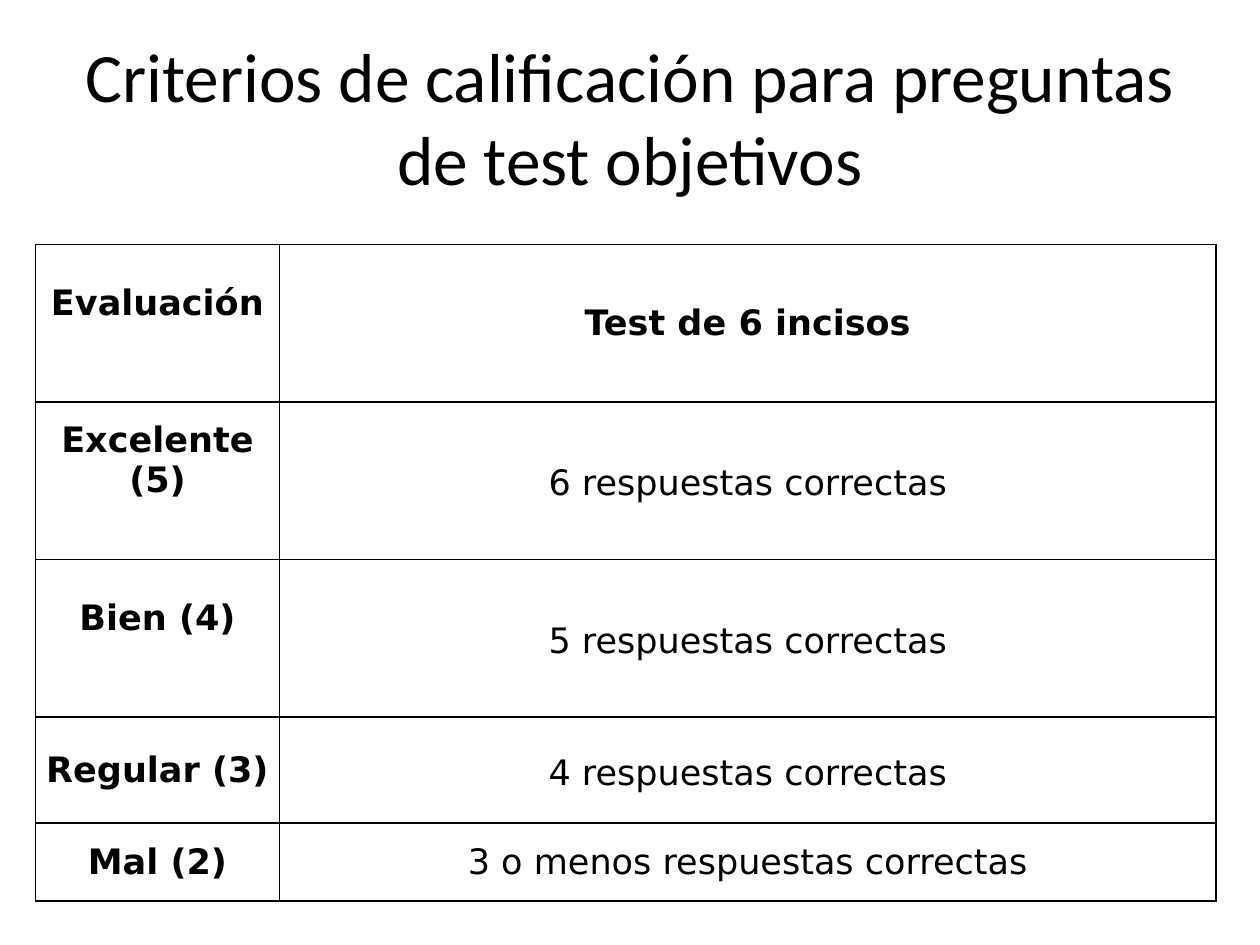
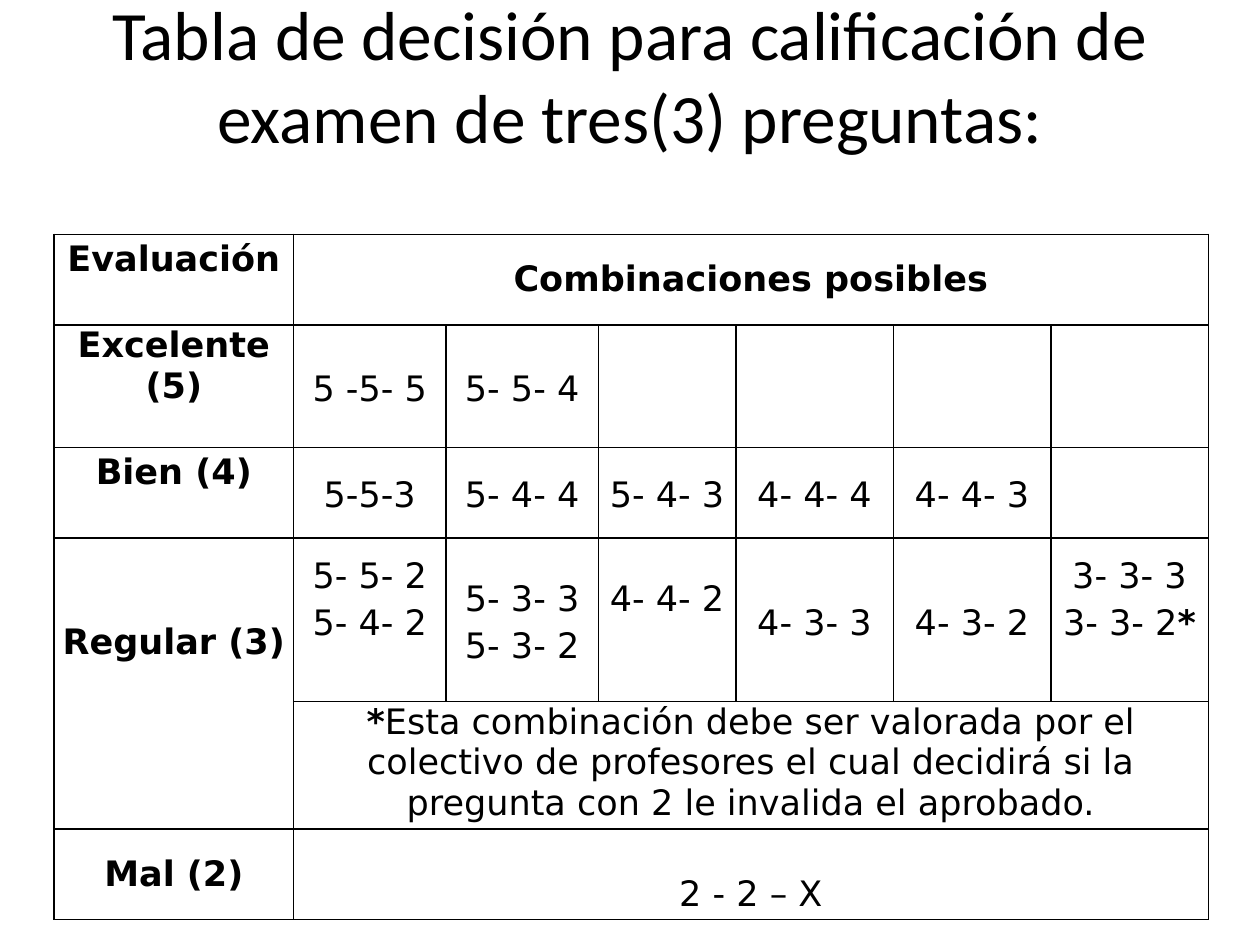
from dataclasses import dataclass
from lxml.etree import SubElement
from pptx import Presentation
from pptx.dml.color import RGBColor
from pptx.enum.text import MSO_ANCHOR, MSO_AUTO_SIZE, PP_ALIGN
from pptx.oxml.ns import qn
from pptx.util import Inches, Pt

BLACK = RGBColor(0x00, 0x00, 0x00)
TITLE_FONT, TITLE_SIZE = "Calibri", Pt(39.6)
CELL_FONT, CELL_SIZE = "DejaVu Sans", Pt(20)
TITLE_LINE, CELL_LINE = Pt(48), Pt(23.28)
LOOSE = 1.15


@dataclass
class Entry:
    text: str = ""
    bold: bool = False
    spacing: float = 1.0
    above: int = 0
    below: int = 0
    span: tuple = (1, 1)
    anchor: MSO_ANCHOR = MSO_ANCHOR.MIDDLE


def head(text, below=0, span=(1, 1)):
    return Entry(text, bold=True, below=below, span=span)


def score(text="", below=0):
    return Entry(text, spacing=LOOSE, below=below)


class Deck:
    def __init__(self):
        self.prs = Presentation()
        self.prs.slide_width, self.prs.slide_height = Inches(10), Inches(7.5)
        self.s = None

    def x(self, percent):
        return int(self.prs.slide_width * percent / 100)

    def y(self, percent):
        return int(self.prs.slide_height * percent / 100)

    def style(self, p, font, size, bold=False):
        p.alignment = PP_ALIGN.CENTER
        p.font.name, p.font.size, p.font.bold = font, size, bold
        p.font.color.rgb = BLACK

    def slide(self, title, lines_below=0):
        self.s = self.prs.slides.add_slide(self.prs.slide_layouts[5])
        sp = self.s.shapes.title
        sp.left, sp.top, sp.width, sp.height = self.x(5), self.y(4), self.x(90), self.y(16.67)
        tf = sp.text_frame
        tf.text = title
        tf.word_wrap = True
        tf.auto_size = MSO_AUTO_SIZE.NONE
        tf.vertical_anchor = MSO_ANCHOR.MIDDLE
        tf.margin_bottom = Inches(0.05) + TITLE_LINE * lines_below
        self.style(tf.paragraphs[0], TITLE_FONT, TITLE_SIZE)

    def borders(self, cell):
        tc_pr = cell._tc.get_or_add_tcPr()
        for side in ("lnL", "lnR", "lnT", "lnB"):
            ln = SubElement(tc_pr, qn(f"a:{side}"), w=str(Pt(1)))
            fill = SubElement(ln, qn("a:solidFill"))
            SubElement(fill, qn("a:srgbClr"), val=str(BLACK))

    def fill_cell(self, cell, entry):
        gap = CELL_LINE * entry.spacing
        cell.vertical_anchor = entry.anchor
        cell.margin_top = int(gap * entry.above)
        cell.margin_bottom = int(gap * entry.below)
        tf = cell.text_frame
        for i, line in enumerate(entry.text.split("\n")):
            p = tf.add_paragraph() if i else tf.paragraphs[0]
            self.style(p, CELL_FONT, CELL_SIZE, entry.bold)
            p.line_spacing = entry.spacing
            for part in filter(None, line.partition("*")):
                r = p.add_run()
                r.text = part
                if part == "*":
                    r.font.bold = True

    def table(self, left, top, columns, rows, entries):
        frame = self.s.shapes.add_table(len(rows), len(columns), self.x(left), self.y(top),
                                        self.x(sum(columns)), self.y(sum(rows)))
        table = frame.table
        table.first_row = table.horz_banding = False
        for column, width in zip(table.columns, columns):
            column.width = self.x(width)
        for row, height in zip(table.rows, rows):
            row.height = self.y(height)
        for cell in table.iter_cells():
            cell.margin_left = cell.margin_right = Inches(0.05)
            cell.margin_top = cell.margin_bottom = 0
            self.borders(cell)
            cell.fill.background()
        for i, row in enumerate(entries):
            for j, entry in enumerate(row):
                if entry is None:
                    continue
                cell = table.cell(i, j)
                down, across = entry.span
                if down * across > 1:
                    cell.merge(table.cell(i + down - 1, j + across - 1))
                self.fill_cell(cell, entry)


def objective_test(deck):
    deck.slide("Criterios de calificación para preguntas de test objetivos")
    deck.table(2.8, 25.87, [19.4, 74.3], [16.67] * 3 + [11.2, 8.27], [
        [head("Evaluación", 1), head("Test de 6 incisos")],
        [head("Excelente (5)", 1), score("6 respuestas correctas")],
        [head("Bien (4)", 1), score("5 respuestas correctas")],
        [head("Regular (3)"), score("4 respuestas correctas")],
        [head("Mal (2)"), Entry("3 o menos respuestas correctas")],
    ])


def three_question_exam(deck):
    wide = (1, 6)
    note = ("*Esta combinación debe ser valorada por el colectivo de profesores "
            "el cual decidirá si la pregunta con 2 le invalida el aprobado.")
    deck.slide("Tabla de decisión para calificación de examen de tres(3) preguntas:", 1)
    deck.table(4.3, 24.8, [19, 12.1, 12.1, 10.9] + [12.5] * 3, [9.6] * 3 + [17.33, 13.47, 9.6], [
        [head("Evaluación", 1), head("Combinaciones posibles", span=wide)],
        [head("Excelente (5)", 1), score("5 -5- 5"), score("5- 5- 4")] + [score()] * 4,
        [head("Bien (4)", 1), score("5-5-3"), score("5- 4- 4"), score("5- 4- 3"),
         score("4- 4- 4"), score("4- 4- 3"), score()],
        [head("Regular (3)", 2, (2, 1)), score("5- 5- 2\n5- 4- 2", 1),
         score("5- 3- 3\n5- 3- 2"), score("4- 4- 2", 1), score("4- 3- 3"),
         score("4- 3- 2"), score("3- 3- 3\n3- 3- 2*", 1)],
        [None, Entry(note, span=wide, anchor=MSO_ANCHOR.TOP)],
        [head("Mal (2)"), Entry("2 - 2 – X", above=1, span=wide)],
    ])


def main():
    deck = Deck()
    objective_test(deck)
    three_question_exam(deck)
    deck.prs.save("out.pptx")


if __name__ == "__main__":
    main()
